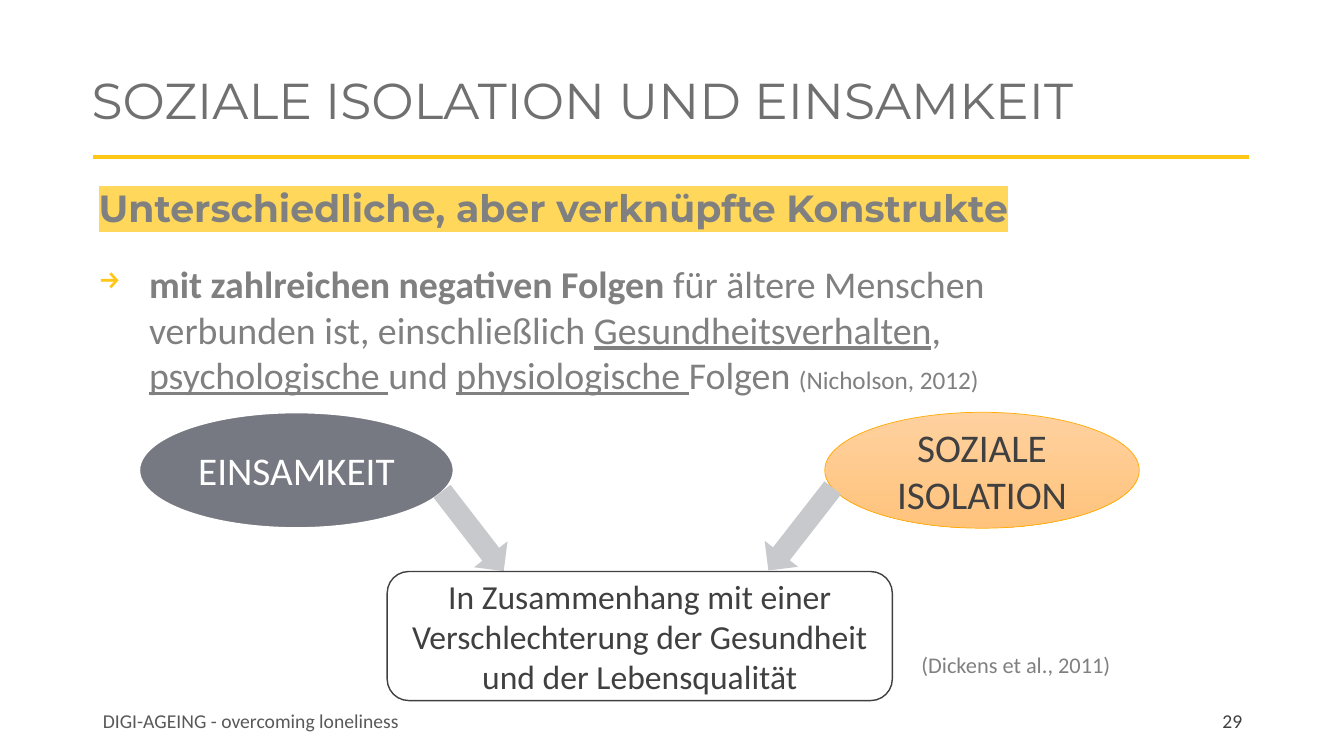
import pptx
import pptx.util
import pptx.dml.color
import pptx.enum.shapes
import pptx.enum.text
import pptx.oxml.ns
from lxml import etree

Inches = pptx.util.Inches
Pt = pptx.util.Pt
qn = pptx.oxml.ns.qn
Shape = pptx.enum.shapes.MSO_SHAPE
Align = pptx.enum.text.PP_ALIGN
Anchor = pptx.enum.text.MSO_ANCHOR

COLORS = {
    "yellow": "FFC715", "marker": "FFD85B", "title": "707070",
    "body": "808080", "footer": "595959", "dark": "404040",
    "slate": "767982", "arrow": "C8C9CD", "white": "FFFFFF",
    "amber": "FFAC06", "peach": "FFD19F", "orange": "FFC37C",
}


def rgb(name):
    return pptx.dml.color.RGBColor.from_string(COLORS[name])


class Board:
    """Holds the fonts and the slide being drawn."""

    head = "Montserrat"
    plain = "Calibri"

    def __init__(self, slide):
        self.slide = slide
        self.shapes = slide.shapes

    def style(self, para, size, color, font=None, bold=None, align=None):
        para.font.size = Pt(size)
        para.font.name = font or self.plain
        para.font.color.rgb = rgb(color)
        para.font.bold = bold
        para.alignment = align

    def text(self, box, words, size, color, anchor=Anchor.MIDDLE, **look):
        item = self.shapes.add_textbox(*map(Inches, box))
        frame = item.text_frame
        frame.word_wrap = True
        frame.vertical_anchor = anchor
        para = frame.paragraphs[0]
        para.text = words
        self.style(para, size, color, **look)
        return frame

    def shape(self, kind, box, fill, line=None, width=1, turn=0):
        item = self.shapes.add_shape(kind, *map(Inches, box))
        item.shadow.inherit = False
        item.rotation = turn
        if isinstance(fill, tuple):
            item.fill.gradient()
            item.fill.gradient_angle = 270
            for stop, name in zip(item.fill.gradient_stops, fill):
                stop.color.rgb = rgb(name)
        else:
            item.fill.solid()
            item.fill.fore_color.rgb = rgb(fill)
        if line:
            item.line.color.rgb = rgb(line)
            item.line.width = Pt(width)
        else:
            item.line.fill.background()
        return item

    def label(self, item, words, size, color):
        frame = item.text_frame
        frame.word_wrap = True
        frame.vertical_anchor = Anchor.MIDDLE
        para = frame.paragraphs[0]
        para.text = words
        self.style(para, size, color, align=Align.CENTER)

    def rule(self, left, right, top, color, width):
        line = self.shapes.add_connector(
            pptx.enum.shapes.MSO_CONNECTOR.STRAIGHT,
            Inches(left), Inches(top), Inches(right), Inches(top))
        line.line.color.rgb = rgb(color)
        line.line.width = Pt(width)
        etree.SubElement(line._element.spPr, qn("a:effectLst"))

    def mark(self, run, color):
        """Put a highlight behind a run."""
        light = etree.SubElement(run._r.get_or_add_rPr(), qn("a:highlight"))
        etree.SubElement(light, qn("a:srgbClr"), val=COLORS[color])

    def bullet(self, para, char, color, percent, indent):
        """Add a hanging bullet; call before the paragraph's font is set."""
        props = para._p.get_or_add_pPr()
        props.set("marL", str(Inches(indent)))
        props.set("indent", str(-Inches(indent)))
        tint = etree.SubElement(props, qn("a:buClr"))
        etree.SubElement(tint, qn("a:srgbClr"), val=COLORS[color])
        etree.SubElement(props, qn("a:buSzPct"), val=str(percent * 1000))
        etree.SubElement(props, qn("a:buChar"), char=char)


def add_body(board):
    frame = board.text((0.88, 1.83, 10.71, 4.86),
                       "Unterschiedliche, aber verknüpfte Konstrukte",
                       27, "body", Anchor.TOP, font=board.head, bold=True)
    frame.margin_right = Inches(0.6)
    lead = frame.paragraphs[0]
    lead.line_spacing = 0.9
    lead.space_before, lead.space_after = Pt(10), Pt(12)
    board.mark(lead.runs[0], "marker")

    point = frame.add_paragraph()
    point.space_before = Pt(10)
    board.bullet(point, "→", "yellow", 75, 0.5)
    board.style(point, 27, "body")
    parts = [
        ("mit zahlreichen negativen Folgen ", {"bold": True}),
        ("für ältere Menschen verbunden ist, einschließlich ", {}),
        ("Gesundheitsverhalten", {"underline": True}),
        (", ", {}),
        ("psychologische ", {"underline": True}),
        ("und ", {}),
        ("physiologische ", {"underline": True}),
        ("Folgen ", {}),
        ("(Nicholson, 2012)", {"size": Pt(18)}),
    ]
    for words, look in parts:
        run = point.add_run()
        run.text = words
        for name, value in look.items():
            setattr(run.font, name, value)


def add_scheme(board):
    left = board.shape(Shape.OVAL, (1.38, 4.09, 3.12, 1.15),
                       "slate", "white", 1.5)
    board.label(left, "EINSAMKEIT", 28, "white")
    board.shape(Shape.RIGHT_ARROW, (4.19, 5.06, 1, 0.42), "arrow", turn=52.3)
    result = board.shape(Shape.ROUNDED_RECTANGLE, (3.84, 5.67, 5.01, 1.28),
                         "white", "dark")
    board.label(result, "In Zusammenhang mit einer Verschlechterung der "
                "Gesundheit und der Lebensqualität", 24, "dark")
    board.text((9.04, 6.41, 2.55, 0.37), "(Dickens et al., 2011)",
               16, "body", Anchor.TOP)
    right = board.shape(Shape.OVAL, (8.18, 4.09, 3.12, 1.15),
                        ("peach", "orange"), "amber", 0.5)
    board.label(right, "SOZIALE ISOLATION", 28, "dark")
    board.shape(Shape.RIGHT_ARROW, (7.42, 5.04, 1.04, 0.42),
                "arrow", turn=127.9)


def main():
    deck = pptx.Presentation()
    deck.slide_width, deck.slide_height = Inches(13.33), Inches(7.5)
    board = Board(deck.slides.add_slide(deck.slide_layouts[6]))
    board.rule(0.92, 12.39, 1.56, "yellow", 3)
    foot = board.text((0.94, 6.95, 7.45, 0.39),
                      "DIGI-AGEING - overcoming loneliness", 14, "footer")
    foot.margin_left = foot.margin_right = Inches(0.08)
    foot.margin_top = foot.margin_bottom = Inches(0.08)
    title = board.text((0.81, 0.47, 11.85, 1.1),
                       "SOZIALE ISOLATION UND EINSAMKEIT",
                       36, "title", font=board.head)
    title.paragraphs[0].line_spacing = 0.9
    add_body(board)
    board.text((9.42, 6.95, 3, 0.4), "29", 14, "dark", align=Align.RIGHT)
    add_scheme(board)
    deck.save("out.pptx")


if __name__ == "__main__":
    main()
